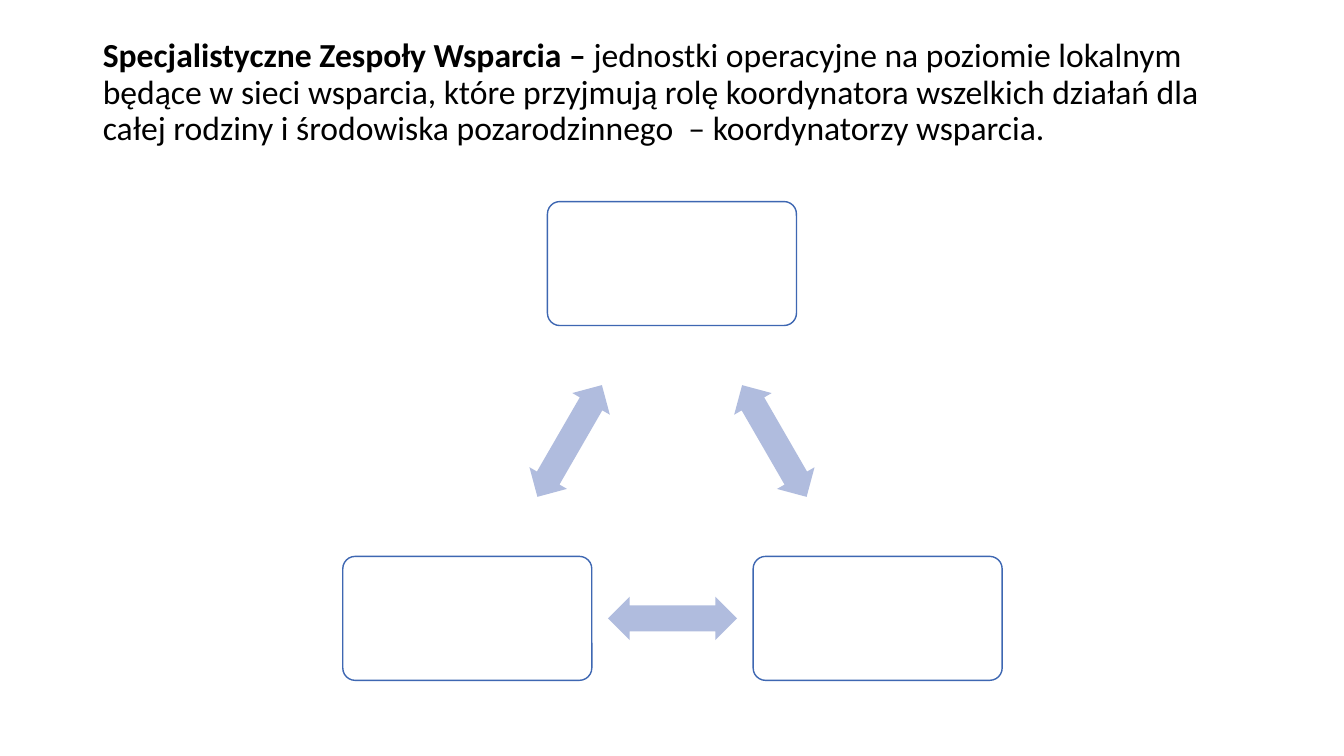
"""Build the slide on specialist support teams with its three-node cycle."""
from dataclasses import dataclass

from pptx import Presentation
from pptx.dml.color import RGBColor
from pptx.enum.shapes import MSO_SHAPE as Preset
from pptx.enum.text import MSO_ANCHOR as Anchor, MSO_AUTO_SIZE as AutoSize, PP_ALIGN as Align
from pptx.slide import Slide
from pptx.util import Emu, Pt

PX = 9144
COLOURS = {"text": "000000", "node": "FFFFFF", "outline": "3E67B2", "arrow": "B0BCDE"}
NODE_W, NODE_H = 247, 123
ARROW_W, ARROW_H = 128, 43
TITLE_ONLY = 5


@dataclass(frozen=True)
class Node:
    left: int
    top: int


@dataclass(frozen=True)
class Link:
    start: Node
    end: Node
    rotation: int


TOP, RIGHT, LEFT = Node(543, 200), Node(747, 552), Node(340, 552)
NODES = (TOP, RIGHT, LEFT)
LINKS = (Link(TOP, RIGHT, 60), Link(RIGHT, LEFT, 180), Link(LEFT, TOP, 300))


def px(length: int) -> Emu:
    return Emu(length * PX)


def colour(name: str) -> RGBColor:
    return RGBColor.from_string(COLOURS[name])


def write_title(slide: Slide) -> None:
    title = slide.shapes.title
    title.left, title.top, title.width, title.height = map(px, (92, 40, 1150, 145))
    frame = title.text_frame
    frame.word_wrap = True
    frame.auto_size = AutoSize.NONE
    frame.vertical_anchor = Anchor.MIDDLE
    definition = frame.paragraphs[0]
    definition.alignment = Align.LEFT
    definition.line_spacing = 0.9
    definition.font.name = "Calibri"
    definition.font.size = Pt(24)
    definition.font.color.rgb = colour("text")
    term = definition.add_run()
    term.text = "Specjalistyczne Zespoły Wsparcia – "
    term.font.bold = True
    meaning = definition.add_run()
    meaning.text = (
        "jednostki operacyjne na poziomie lokalnym będące w sieci wsparcia, "
        "które przyjmują rolę koordynatora wszelkich działań dla całej rodziny "
        "i środowiska pozarodzinnego  – koordynatorzy wsparcia."
    )
    meaning.font.bold = False
    definition.add_line_break()


def draw_node(slide: Slide, node: Node) -> None:
    box = slide.shapes.add_shape(
        Preset.ROUNDED_RECTANGLE, px(node.left), px(node.top), px(NODE_W), px(NODE_H)
    )
    box.adjustments[0] = 0.1
    box.shadow.inherit = False
    box.fill.solid()
    box.fill.fore_color.rgb = colour("node")
    box.line.color.rgb = colour("outline")
    box.line.width = Pt(1)


def draw_link(slide: Slide, link: Link) -> None:
    left = (link.start.left + link.end.left + NODE_W - ARROW_W) // 2
    top = (link.start.top + link.end.top + NODE_H - ARROW_H) // 2
    arrow = slide.shapes.add_shape(
        Preset.LEFT_RIGHT_ARROW, px(left), px(top), px(ARROW_W), px(ARROW_H)
    )
    arrow.adjustments[0] = 0.6
    arrow.adjustments[1] = 0.5
    arrow.rotation = link.rotation
    arrow.shadow.inherit = False
    arrow.fill.solid()
    arrow.fill.fore_color.rgb = colour("arrow")
    arrow.line.fill.background()


def main() -> None:
    deck = Presentation()
    deck.slide_width, deck.slide_height = px(1333), px(750)
    slide = deck.slides.add_slide(deck.slide_layouts[TITLE_ONLY])
    write_title(slide)
    for node in NODES:
        draw_node(slide, node)
    for link in LINKS:
        draw_link(slide, link)
    deck.save("out.pptx")


if __name__ == "__main__":
    main()
